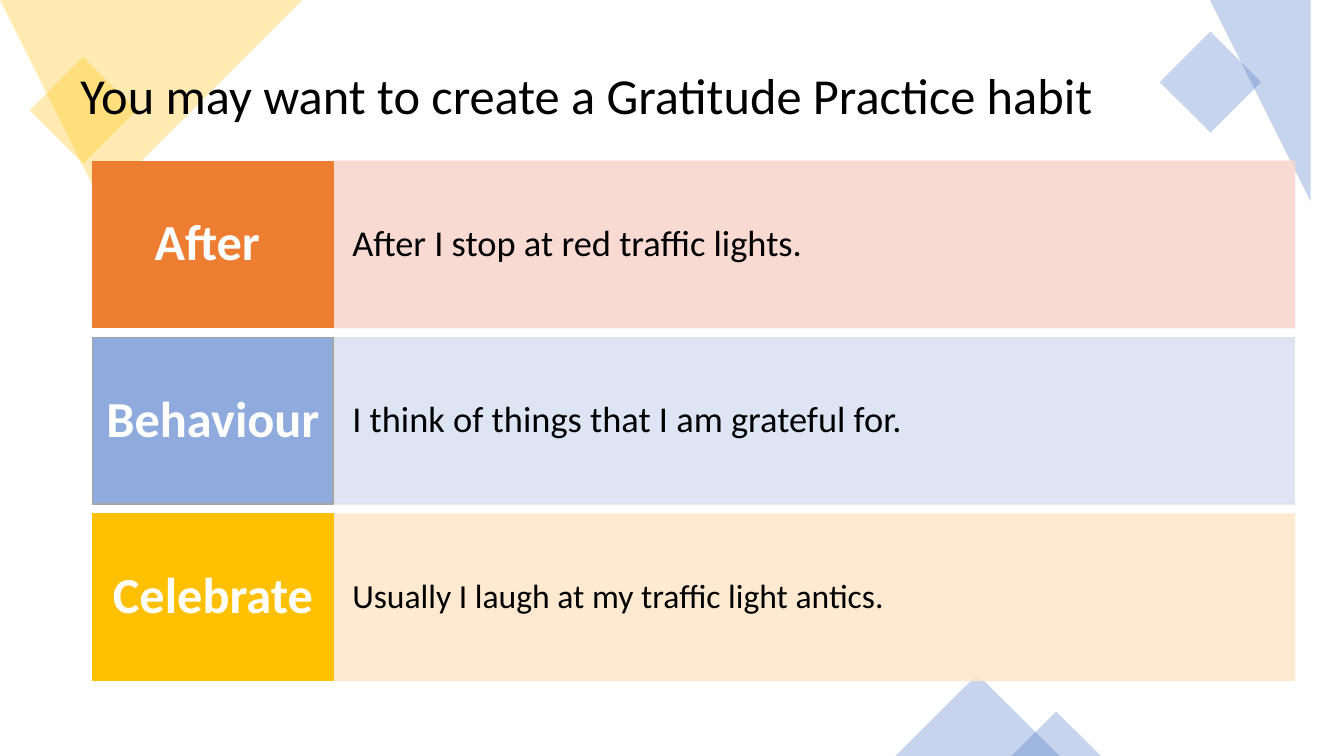
from pptx import Presentation
from pptx.dml.color import RGBColor
from pptx.enum.shapes import MSO_SHAPE
from pptx.enum.text import MSO_ANCHOR, PP_ALIGN
from pptx.oxml.ns import qn
from pptx.util import Inches, Pt

RECTANGLE, TRIANGLE = MSO_SHAPE.RECTANGLE, MSO_SHAPE.ISOSCELES_TRIANGLE
MIDDLE = MSO_ANCHOR.MIDDLE
LEFT, CENTER = PP_ALIGN.LEFT, PP_ALIGN.CENTER

SLIDE_WIDTH, SLIDE_HEIGHT = 13.33, 7.5
GOLD, BLUE, BLACK, WHITE = "FFC000", "4472C4", "000000", "FFFFFF"
DECOR_OPACITY, PANEL_OPACITY = 30, 90
ROW_GAP, LABEL_SHARE = 0.1, 0.2

HABIT_STEPS = [
    ("After ", "After I stop at red traffic lights.", 26,
     "ED7D31", "ED7D31", "F8D7CE", "F8D7CE"),
    ("Behaviour", "I think of things that I am grateful for.", 26,
     "8FAADC", "A5A5A5", "DAE3F3", "E1E1E1"),
    ("Celebrate", "Usually I laugh at my traffic light antics.", 24,
     GOLD, GOLD, "FFE8CC", "FFE8CC"),
]


def color(hex_text):
    """Turn a hex string into a colour."""
    return RGBColor.from_string(hex_text)


def paint(shape, fill, line=None, opacity=100):
    """Set the fill, outline and opacity of a shape."""
    shape.shadow.inherit = False
    shape.fill.solid()
    shape.fill.fore_color.rgb = color(fill)
    if line:
        shape.line.color.rgb = color(line)
        shape.line.width = Pt(1)
    else:
        shape.line.fill.background()
    if opacity < 100:
        for tint in shape.element.spPr.iter(qn("a:srgbClr")):
            alpha = tint.makeelement(qn("a:alpha"), {"val": str(opacity * 1000)})
            tint.append(alpha)


def write(shape, text, size, ink, align=LEFT, bold=False, insets=(0.1, 0.05)):
    """Put one vertically centred paragraph into a shape."""
    frame = shape.text_frame
    frame.word_wrap = True
    frame.vertical_anchor = MIDDLE
    frame.margin_left = frame.margin_right = Inches(insets[0])
    frame.margin_top = frame.margin_bottom = Inches(insets[1])
    paragraph = frame.paragraphs[0]
    paragraph.text = text
    paragraph.alignment = align
    paragraph.line_spacing = 0.9
    paragraph.font.name = "Calibri"
    paragraph.font.size = Pt(size)
    paragraph.font.bold = bold
    paragraph.font.color.rgb = color(ink)


def add_box(slide, kind, box):
    """Add a preset shape at left, top, width, height in inches."""
    return slide.shapes.add_shape(kind, *map(Inches, box))


def add_outline(slide, points, fill):
    """Add a translucent polygon through points in inches."""
    builder = slide.shapes.build_freeform(*points[0], scale=Inches(1))
    builder.add_line_segments(points[1:], close=True)
    paint(builder.convert_to_shape(), fill, opacity=DECOR_OPACITY)


def add_corner(slide, points, square, fill):
    """Add a corner polygon with a small diamond over it."""
    add_outline(slide, points, fill)
    diamond = add_box(slide, RECTANGLE, square)
    diamond.rotation = 45
    paint(diamond, fill, opacity=DECOR_OPACITY)


def add_peaks(slide, boxes):
    """Add triangles that rise from the bottom edge."""
    for left, width, height in boxes:
        peak = add_box(slide, TRIANGLE, (left, SLIDE_HEIGHT - height, width, height))
        paint(peak, BLUE, opacity=DECOR_OPACITY)


def add_title(slide, text, box):
    """Add the slide title in the given box."""
    title = slide.shapes.add_textbox(*map(Inches, box))
    write(title, text, 36, BLACK)


def add_habit_rows(slide, box):
    """Stack one label and one panel per habit step inside the box."""
    left, top, width, height = box
    count = len(HABIT_STEPS)
    row_height = (height - ROW_GAP * (count - 1)) / count
    label_width = width * LABEL_SHARE
    for index, step in enumerate(HABIT_STEPS):
        label, text, size, label_fill, label_line, panel_fill, panel_line = step
        row_top = top + index * (row_height + ROW_GAP)
        panel = add_box(slide, RECTANGLE,
                        (left + label_width, row_top, width - label_width, row_height))
        paint(panel, panel_fill, panel_line, PANEL_OPACITY)
        write(panel, text, size, BLACK, insets=(0.19, 0.42))
        tag = add_box(slide, RECTANGLE, (left, row_top, label_width, row_height))
        paint(tag, label_fill, label_line)
        write(tag, label, 36, WHITE, CENTER, True, (0.13, 0.16))


def main():
    """Build and save the slide."""
    presentation = Presentation()
    presentation.slide_width = Inches(SLIDE_WIDTH)
    presentation.slide_height = Inches(SLIDE_HEIGHT)
    slide = presentation.slides.add_slide(presentation.slide_layouts[6])
    add_corner(slide, [(0, 0), (3.1, 0), (1.4, 1.62), (0, 0.28)],
               (0.45, 0.72, 0.75, 0.75), GOLD)
    add_corner(slide, [(11.81, 0), (SLIDE_WIDTH, 0), (SLIDE_WIDTH, 1.3),
                       (12.92, 1.71), (11.5, 0.3)],
               (11.65, 0.46, 0.71, 0.71), BLUE)
    add_peaks(slide, [(8.88, 1.63, 0.81), (10.03, 0.89, 0.44)])
    add_title(slide, "You may want to create a Gratitude Practice habit",
              (0.7, 0.35, 11.93, 1.24))
    add_habit_rows(slide, (0.92, 1.6, 11.92, 5.15))
    presentation.save("out.pptx")


if __name__ == "__main__":
    main()
